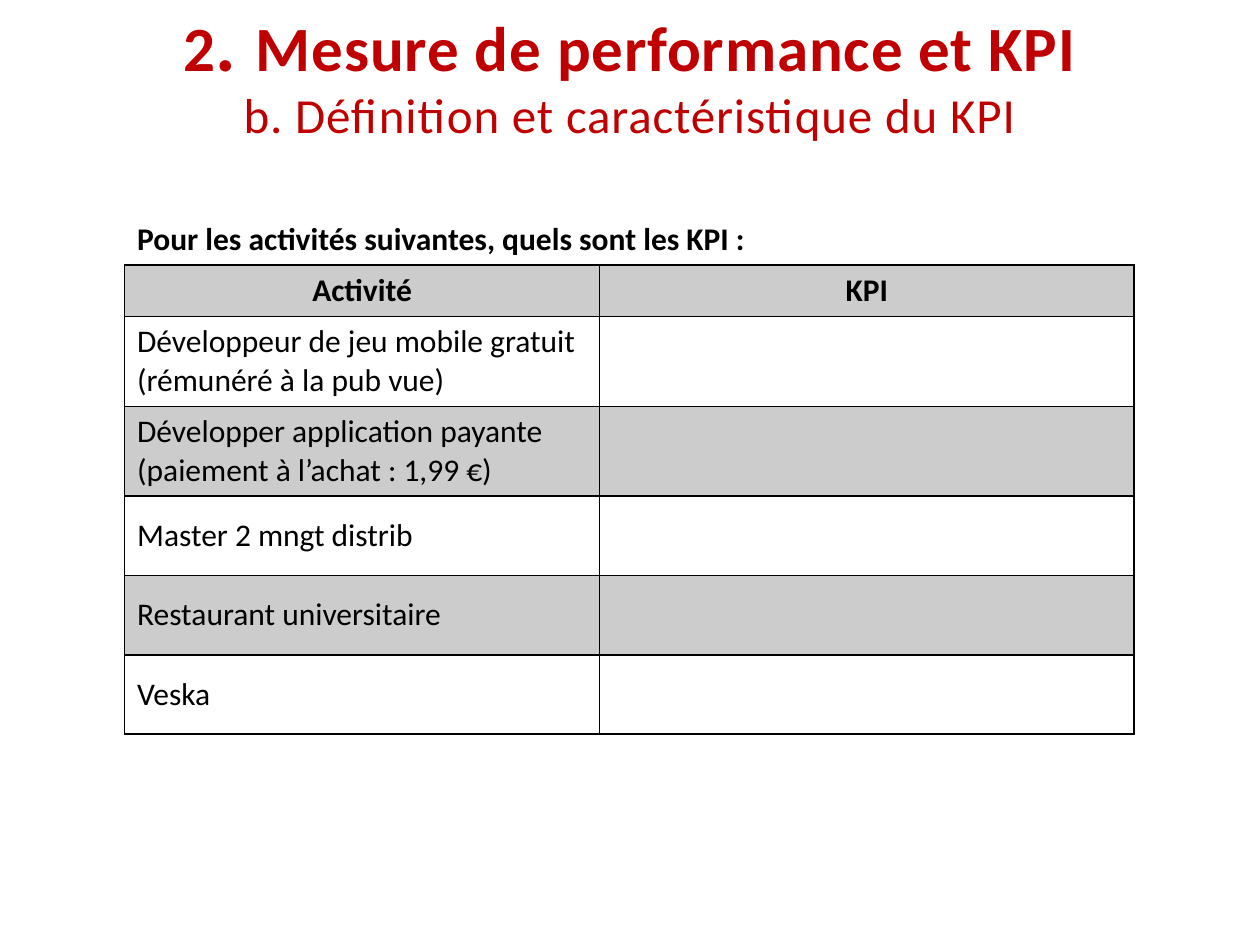
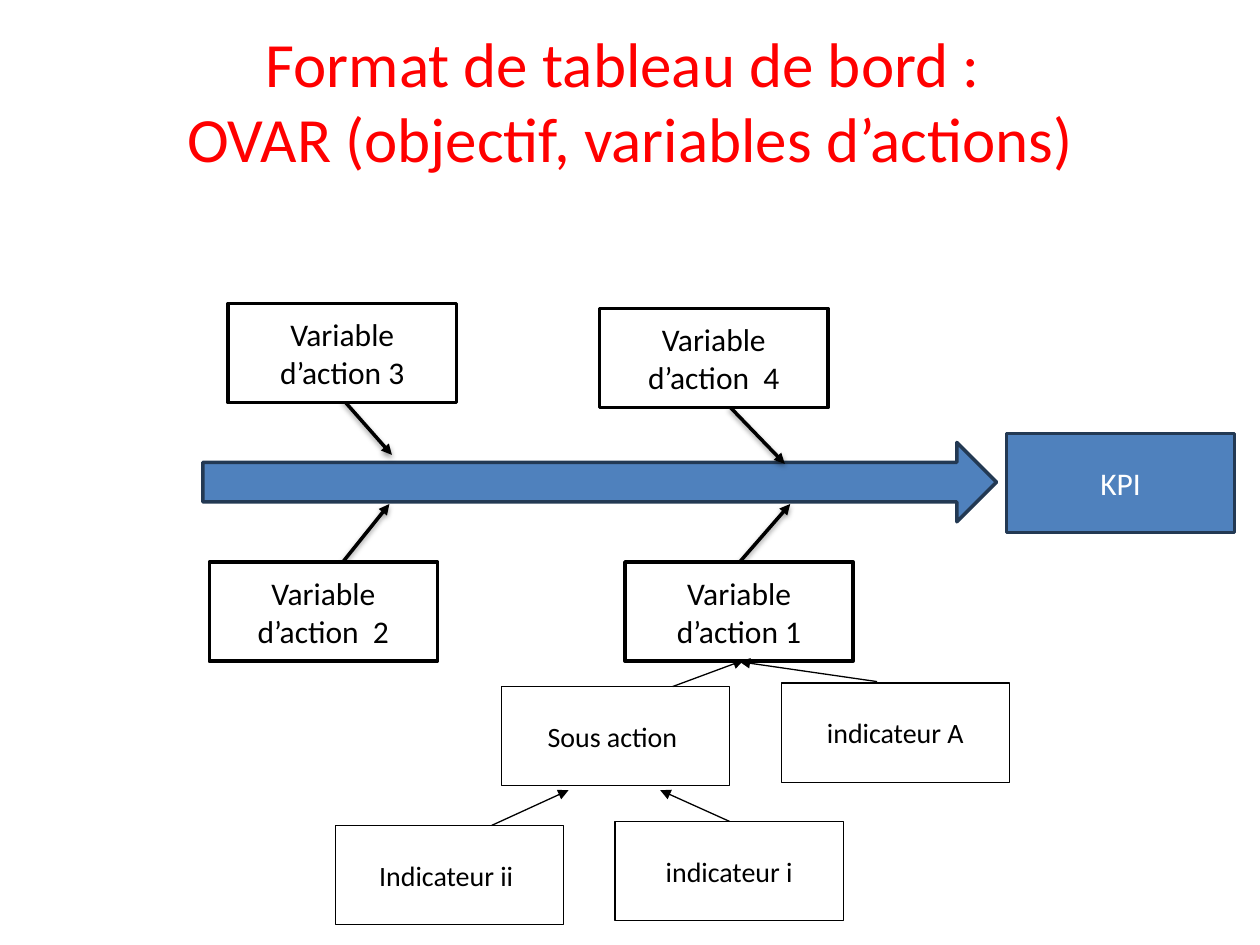
import pptx
import pptx.util
import pptx.dml.color
import pptx.enum.shapes
import pptx.enum.text
import pptx.oxml
import pptx.oxml.ns

Cm = pptx.util.Cm
Pt = pptx.util.Pt
RGBColor = pptx.dml.color.RGBColor
SHAPES = pptx.enum.shapes.MSO_SHAPE
ALIGN = pptx.enum.text.PP_ALIGN
ANCHOR = pptx.enum.text.MSO_ANCHOR

BLACK = RGBColor(0, 0, 0)
WHITE = RGBColor(255, 255, 255)
BAND_GREY = RGBColor(0xCC, 0xCC, 0xCC)
DARK_RED = RGBColor(0xC0, 0, 0)
RED = RGBColor(255, 0, 0)
BLUE = RGBColor(0x4F, 0x81, 0xBD)
NAVY = RGBColor(0x23, 0x39, 0x53)
FONT = "Calibri"
THICK, THIN = 2, 0.75

# Title paragraphs: lists of (text, size, bold)
MEASURE_TITLE = [
    [("2", 36, True), (". ", 44, True), ("Mesure de performance et KPI", 36, True)],
    [("b. Définition et caractéristique du KPI", 28, False)],
]
OVAR_TITLE = [
    [("Format de tableau de bord : ", 36, False)],
    [("OVAR (objectif, variables d’actions)", 36, False)],
]

QUESTION = "Pour les activités suivantes, quels sont les KPI :"
HEADINGS = ("Activité", "KPI")
# Activity and row height in cm
ACTIVITIES = [
    ("Développeur de jeu mobile gratuit (rémunéré à la pub vue)", 1.81),
    ("Développer application payante\n(paiement à l’achat : 1,99 €)", 1.81),
    ("Master 2 mngt distrib", 1.6),
    ("Restaurant universitaire", 1.6),
    ("Veska", 1.6),
]
COLUMN_WIDTHS = (9.58, 10.77)
QUESTION_HEIGHT, HEADING_HEIGHT = 1.02, 1.04

# Boxes: text, left, top in cm
BOX_SIZE = (4.6, 2.0)
GOAL = ("KPI", 20.29, 8.74)
SPINE = (4.09, 8.92, 16, 1.6)
VARIABLES = [
    ("Variable d’action 1", 12.6, 11.33),
    ("Variable d’action  2", 4.22, 11.33),
    ("Variable d’action 3", 4.6, 6.12),
    ("Variable d’action  4", 12.09, 6.22),
]
INDICATORS = [
    ("indicateur A", 15.75, 13.77),
    ("Sous action ", 10.11, 13.84),
    ("indicateur i", 12.4, 16.56),
    ("Indicateur ii ", 6.76, 16.64),
]
# Arrows: start x, start y, end x, end y in cm
VARIABLE_ARROWS = [
    (6.91, 8.05, 7.9, 9.17),
    (6.91, 11.33, 7.85, 10.16),
    (14.91, 11.33, 15.93, 10.16),
    (14.71, 8.2, 15.82, 9.35),
]
INDICATOR_ARROWS = [
    (13.56, 13.84, 14.99, 13.31),
    (17.68, 13.74, 14.91, 13.34),
    (9.91, 16.64, 11.46, 15.93),
    (14.71, 16.56, 13.31, 15.93),
]


def append_xml(parent, xml):
    """Append a DrawingML fragment whose root tag declares no namespace."""
    tag, rest = xml[:-2].split(" ", 1) if xml.endswith("/>") and xml.count("<") == 1 \
        else (xml.split(">", 1)[0], None)
    namespace = " " + pptx.oxml.ns.nsdecls("a")
    parent.append(pptx.oxml.parse_xml(xml.replace(tag, tag + namespace, 1)))


def style_span(span, size, color, bold=False):
    span.font.name = FONT
    span.font.size = Pt(size)
    span.font.bold = bold
    span.font.color.rgb = color


def add_title(page, paragraphs, color, top, height, inset, line_spacing=1.0, tracking=0):
    """Add a centred title; tracking is in hundredths of a point."""
    box = page.shapes.add_textbox(Cm(1.27), Cm(top), Cm(22.86), Cm(height))
    frame = box.text_frame
    frame.word_wrap = True
    frame.margin_top = Cm(inset)
    for index, pieces in enumerate(paragraphs):
        para = frame.add_paragraph() if index else frame.paragraphs[0]
        para.alignment = ALIGN.CENTER
        para.line_spacing = line_spacing
        for text, size, bold in pieces:
            span = para.add_run()
            span.text = text
            style_span(span, size, color, bold)
            if tracking:
                span.font._element.set("spc", str(tracking))


def fill_cell(cell, text="", fill=None, bold=False, alignment=ALIGN.LEFT, sides="LRTB"):
    properties = cell._tc.get_or_add_tcPr()
    for side in sides:
        append_xml(properties, f'<a:ln{side}><a:solidFill><a:srgbClr val="{BLACK}"/>'
                               f'</a:solidFill></a:ln{side}>')
        properties[-1].set("w", str(Pt(1)))
    if fill is None:
        cell.fill.background()
    else:
        cell.fill.solid()
        cell.fill.fore_color.rgb = fill
    cell.vertical_anchor = ANCHOR.MIDDLE
    cell.text = text
    for para in cell.text_frame.paragraphs:
        para.alignment = alignment
        for span in para.runs:
            style_span(span, 18, BLACK, bold)


def add_activity_table(page):
    heights = [QUESTION_HEIGHT, HEADING_HEIGHT] + [height for _, height in ACTIVITIES]
    frame = page.shapes.add_table(len(heights), len(COLUMN_WIDTHS), Cm(2.51), Cm(4.32),
                                  Cm(sum(COLUMN_WIDTHS)), Cm(sum(heights)))
    table = frame.table
    table.first_row = table.horz_banding = False
    for column, width in zip(table.columns, COLUMN_WIDTHS):
        column.width = Cm(width)
    for row, height in zip(table.rows, heights):
        row.height = Cm(height)

    table.cell(0, 0).merge(table.cell(0, 1))
    fill_cell(table.cell(0, 0), QUESTION, bold=True, sides="B")
    table.cell(0, 0).vertical_anchor = ANCHOR.TOP
    for column, heading in enumerate(HEADINGS):
        fill_cell(table.cell(1, column), heading, BAND_GREY, True, ALIGN.CENTER)
    for row, (activity, _) in enumerate(ACTIVITIES, start=2):
        fill = BAND_GREY if row % 2 else None
        fill_cell(table.cell(row, 0), activity, fill)
        fill_cell(table.cell(row, 1), fill=fill)


def add_block(page, preset, place, fill, line, weight):
    block = page.shapes.add_shape(preset, *map(Cm, place))
    block.shadow.inherit = False
    block.fill.solid()
    block.fill.fore_color.rgb = fill
    block.line.color.rgb = line
    block.line.width = Pt(weight)
    return block


def add_box(page, label, size, fill=WHITE, line=BLACK, weight=THICK, color=BLACK):
    text, left, top = label
    box = add_block(page, SHAPES.RECTANGLE, (left, top, *BOX_SIZE), fill, line, weight)
    frame = box.text_frame
    frame.word_wrap = True
    frame.vertical_anchor = ANCHOR.MIDDLE
    frame.text = text
    para = frame.paragraphs[0]
    para.alignment = ALIGN.CENTER
    style_span(para.runs[0], size, color)


def add_arrow(page, ends, weight, shadow=False):
    arrow = page.shapes.add_connector(pptx.enum.shapes.MSO_CONNECTOR.STRAIGHT, *map(Cm, ends))
    arrow.line.color.rgb = BLACK
    arrow.line.width = Pt(weight)
    append_xml(arrow.line._get_or_add_ln(), '<a:tailEnd type="triangle"/>')
    effect = (f'<a:outerShdw blurRad="{Pt(3.1)}" dist="{Pt(1.6)}" dir="5400000" rotWithShape="0">'
              f'<a:srgbClr val="{BLACK}"><a:alpha val="38000"/></a:srgbClr></a:outerShdw>')
    append_xml(arrow._element.spPr, f'<a:effectLst>{effect if shadow else ""}</a:effectLst>')


def build_measure_page(page):
    add_title(page, MEASURE_TITLE, DARK_RED, -0.28, 3.18, 0.3, line_spacing=0.95, tracking=50)
    add_activity_table(page)


def build_ovar_page(page):
    add_box(page, GOAL, 18, BLUE, NAVY, color=WHITE)
    add_block(page, SHAPES.RIGHT_ARROW, SPINE, BLUE, NAVY, THICK)
    for ends in VARIABLE_ARROWS:
        add_arrow(page, ends, THICK, shadow=True)
    for label in VARIABLES:
        add_box(page, label, 18)
    for label in INDICATORS:
        add_box(page, label, 16, weight=THIN)
    for ends in INDICATOR_ARROWS:
        add_arrow(page, ends, THIN)
    add_title(page, OVAR_TITLE, RED, 0.33, 3.4, 0.16)


def main():
    deck = pptx.Presentation()
    deck.slide_width, deck.slide_height = Cm(25.4), Cm(19.05)
    for build_page in (build_measure_page, build_ovar_page):
        build_page(deck.slides.add_slide(deck.slide_layouts[6]))
    deck.save("out.pptx")


if __name__ == "__main__":
    main()
